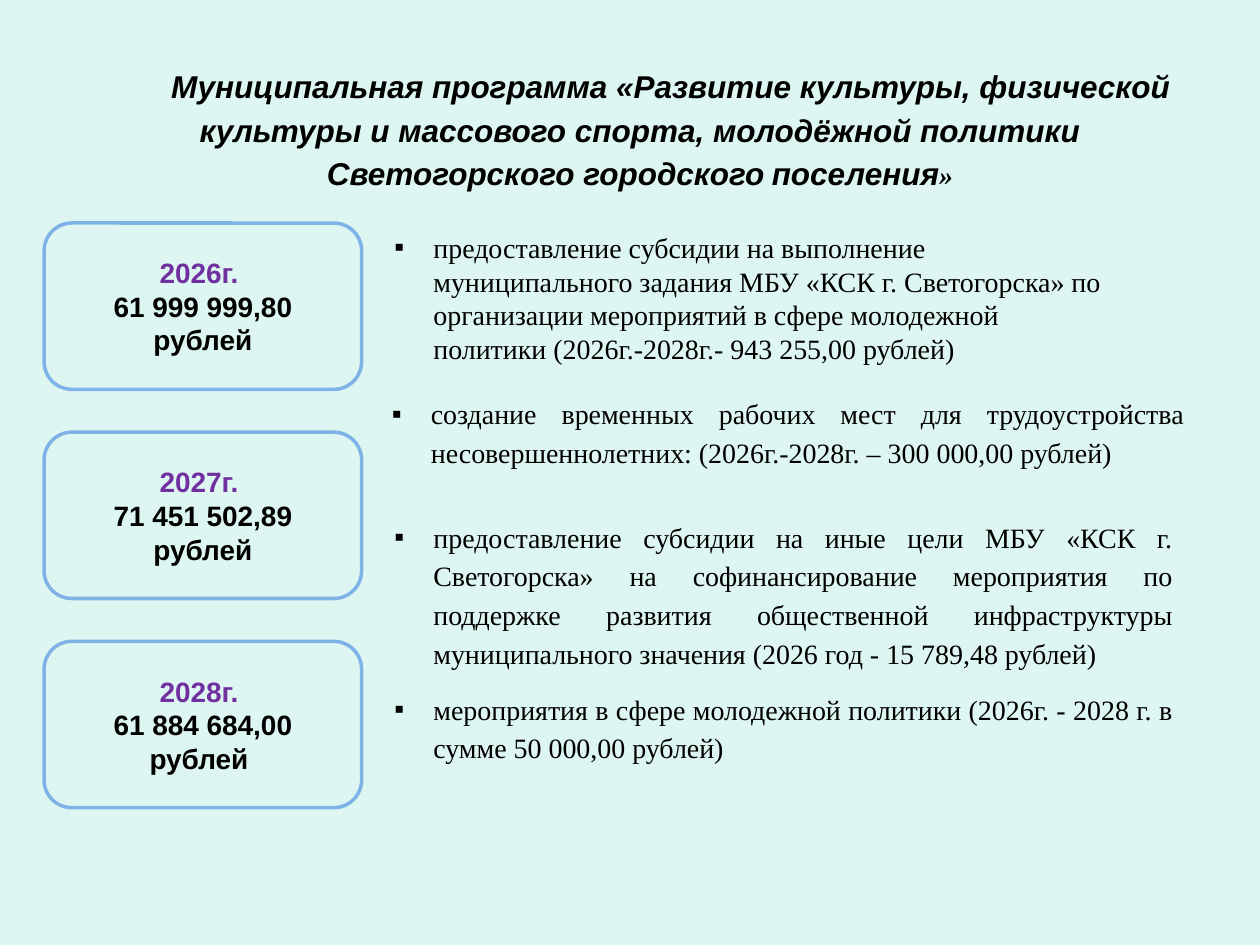
from dataclasses import dataclass

import pptx
import pptx.dml.color
import pptx.enum.shapes
import pptx.enum.text
import pptx.oxml
import pptx.oxml.ns
import pptx.util

COLUMNS, ROWS = 100, 75
COLORS = {"background": "DEF6F1", "border": "7FB3E7", "year": "7030A0", "text": "000000"}
SANS, SERIF = "Arial", "Times New Roman"
COMPARISON_LAYOUT = 4
HANGING = pptx.util.Inches(0.31)

Align = pptx.enum.text.PP_ALIGN
Anchor = pptx.enum.text.MSO_ANCHOR


@dataclass(frozen=True)
class Area:
    """Place on the slide in grid columns and rows."""
    column: float
    row: float
    columns: float
    rows: float


@dataclass(frozen=True)
class YearBudget:
    year: str
    amount: str


@dataclass(frozen=True)
class Measures:
    placeholder: int
    area: Area
    items: tuple[str, ...]
    align: Align = Align.JUSTIFY
    line_spacing: float = 1.15
    space_after: int = 10


TITLE_AREA = Area(5.9, 4.4, 89.8, 11.5)
TITLE_PARTS = (
    ("Муниципальная программа «Развитие культуры, физической культуры и массового "
     "спорта, молодёжной политики Светогорского городского", SANS, 18),
    (" ", SERIF, 16),
    ("поселения", SANS, 18),
    ("»", SERIF, 16),
)
BUDGETS = (
    YearBudget("2026г. ", "61 999 999,80 рублей"),
    YearBudget("2027г. ", "71 451 502,89 рублей"),
    YearBudget("2028г. ", "61 884 684,00 рублей "),
)
FIRST_BUDGET = Area(3.5, 17.7, 25.2, 13.2)
BUDGET_STEP = 16.6
MEASURES = (
    Measures(1, Area(30.3, 17.8, 58.3, 11.8), (
        "предоставление субсидии на выполнение муниципального задания МБУ «КСК "
        "г. Светогорска» по организации мероприятий в сфере молодежной политики "
        "(2026г.-2028г.- 943 255,00 рублей)",
    ), Align.LEFT, 1.0, 0),
    Measures(2, Area(30.1, 30.6, 64.9, 7.2), (
        "создание временных рабочих мест для трудоустройства несовершеннолетних: "
        "(2026г.-2028г. – 300 000,00 рублей)",
    )),
    Measures(3, Area(30.3, 40.4, 63.8, 21), (
        "предоставление субсидии на иные цели МБУ «КСК г. Светогорска» на "
        "софинансирование мероприятия по поддержке развития общественной "
        "инфраструктуры муниципального значения (2026 год - 15 789,48 рублей)",
        "мероприятия в сфере молодежной политики (2026г. - 2028 г. в сумме "
        "50 000,00 рублей)",
    )),
)


def rgb(name: str) -> pptx.dml.color.RGBColor:
    return pptx.dml.color.RGBColor.from_string(COLORS[name])


def bounds(area: Area, width: int, height: int) -> tuple[int, int, int, int]:
    """Convert grid units to left, top, width and height in EMU."""
    return (round(area.column * width / COLUMNS), round(area.row * height / ROWS),
            round(area.columns * width / COLUMNS), round(area.rows * height / ROWS))


def style_run(run, font: str, size: int, color: str = "text",
              bold: bool = False, italic: bool = False) -> None:
    run.font.name = font
    run.font.size = pptx.util.Pt(size)
    run.font.color.rgb = rgb(color)
    run.font.bold = bold
    run.font.italic = italic


def place(shape, position: tuple[int, int, int, int]) -> None:
    shape.left, shape.top, shape.width, shape.height = position
    frame = shape.text_frame
    frame.word_wrap = True
    frame.vertical_anchor = Anchor.TOP
    frame.auto_size = pptx.enum.text.MSO_AUTO_SIZE.SHAPE_TO_FIT_TEXT


def space(paragraph, align: Align, line_spacing: float, after: int) -> None:
    paragraph.alignment = align
    paragraph.line_spacing = line_spacing
    paragraph.space_before = pptx.util.Pt(0)
    paragraph.space_after = pptx.util.Pt(after)


def add_bullet(paragraph) -> None:
    properties = paragraph._p.get_or_add_pPr()
    properties.set("marL", str(HANGING))
    properties.set("indent", str(-HANGING))
    namespace = pptx.oxml.ns.nsdecls("a")
    for markup in (f'<a:buFont {namespace} typeface="{SERIF}"/>',
                   f'<a:buChar {namespace} char="▪"/>'):
        properties.append(pptx.oxml.parse_xml(markup))


def fill_title(title, position: tuple[int, int, int, int]) -> None:
    place(title, position)
    paragraph = title.text_frame.paragraphs[0]
    space(paragraph, Align.CENTER, 1.15, 10)
    paragraph._p.get_or_add_pPr().set("indent", str(pptx.util.Inches(0.49)))
    for words, font, size in TITLE_PARTS:
        run = paragraph.add_run()
        run.text = words
        style_run(run, font, size, bold=True, italic=True)


def add_budget(slide, budget: YearBudget, position: tuple[int, int, int, int]) -> None:
    card = slide.shapes.add_shape(
        pptx.enum.shapes.MSO_SHAPE.ROUNDED_RECTANGLE, *position)
    card.shadow.inherit = False
    card.fill.solid()
    card.fill.fore_color.rgb = rgb("background")
    card.line.color.rgb = rgb("border")
    card.line.width = pptx.util.Pt(2)
    card.text_frame.word_wrap = True
    card.text_frame.vertical_anchor = Anchor.MIDDLE
    paragraph = card.text_frame.paragraphs[0]
    paragraph.text = f"{budget.year}\v{budget.amount}"
    paragraph.alignment = Align.CENTER
    for run, color in zip(paragraph.runs, ("year", "text")):
        style_run(run, SANS, 16, color, bold=True)


def fill_measures(body, measures: Measures, position: tuple[int, int, int, int]) -> None:
    place(body, position)
    body.text_frame.text = "\n".join(measures.items)
    for paragraph in body.text_frame.paragraphs:
        add_bullet(paragraph)
        space(paragraph, measures.align, measures.line_spacing, measures.space_after)
        for run in paragraph.runs:
            style_run(run, SERIF, 16)


def main() -> None:
    deck = pptx.Presentation()
    deck.slide_width = pptx.util.Inches(10)
    deck.slide_height = pptx.util.Inches(7.5)
    size = deck.slide_width, deck.slide_height
    slide = deck.slides.add_slide(deck.slide_layouts[COMPARISON_LAYOUT])
    slide.background.fill.solid()
    slide.background.fill.fore_color.rgb = rgb("background")

    fill_title(slide.shapes.title, bounds(TITLE_AREA, *size))
    bodies = {body.placeholder_format.idx: body for body in slide.placeholders}
    for measures in MEASURES:
        fill_measures(bodies[measures.placeholder], measures,
                      bounds(measures.area, *size))
    unused = bodies[4].element
    unused.getparent().remove(unused)

    for order, budget in enumerate(BUDGETS):
        area = Area(FIRST_BUDGET.column, FIRST_BUDGET.row + order * BUDGET_STEP,
                    FIRST_BUDGET.columns, FIRST_BUDGET.rows)
        add_budget(slide, budget, bounds(area, *size))
    deck.save("out.pptx")


if __name__ == "__main__":
    main()
